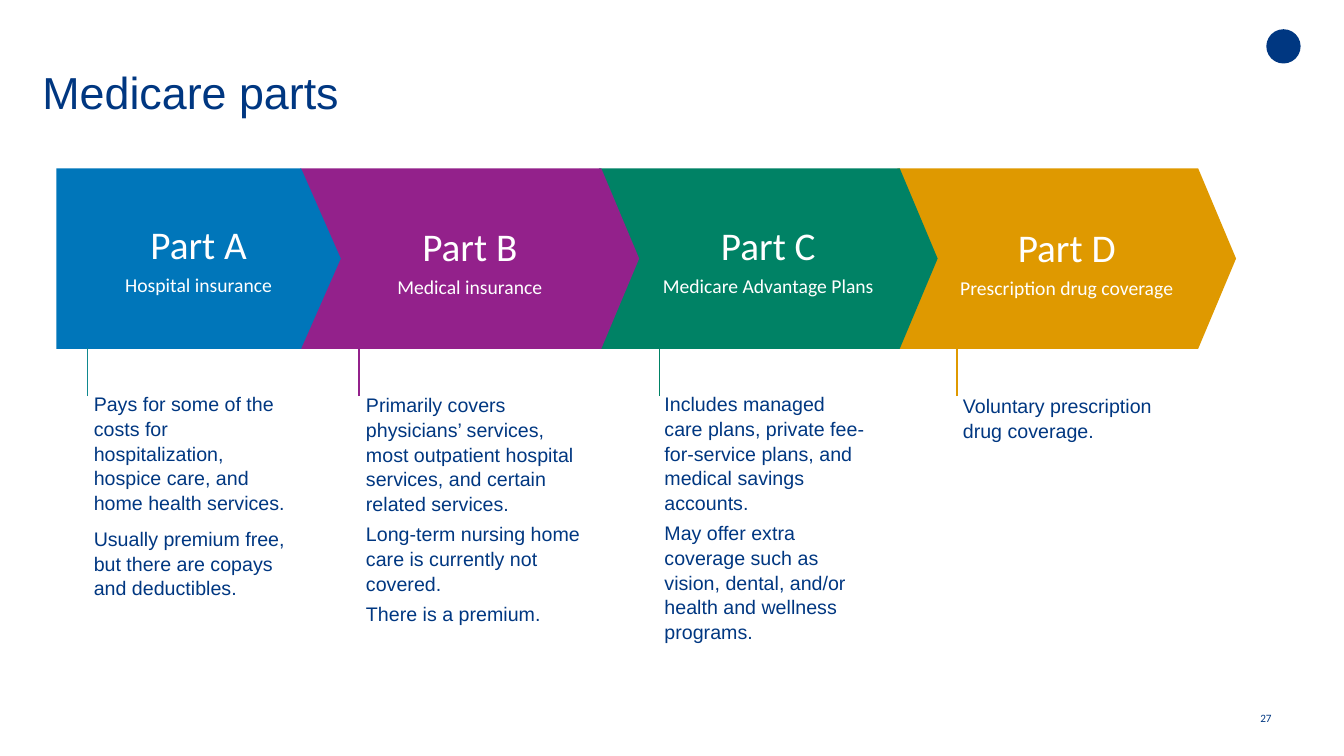
"""Build the Medicare parts slide: four arrow bands with notes below."""
from lxml.etree import SubElement
from pptx import Presentation
from pptx.dml.color import RGBColor
from pptx.enum.shapes import MSO_CONNECTOR, MSO_SHAPE
from pptx.enum.text import MSO_ANCHOR as ANCHOR, PP_ALIGN as ALIGN
from pptx.oxml.ns import qn
from pptx.util import Pt

NAVY, WHITE = "003781", "FFFFFF"
PARTS = [
    dict(name="Part A", subtitle="Hospital insurance", fill="0076BA", stem="0F898F",
         stem_x=87, label_y=167, note_box=(93, 388, 199), space_after=6,
         notes=["Pays for some of the costs for hospitalization, hospice care, "
                "and home health services.",
                "Usually premium free, but there are copays and deductibles."]),
    dict(name="Part B", subtitle="Medical insurance", fill="93218B", stem="93218B",
         stem_x=356, label_y=169, note_box=(363, 389, 222), space_after=2,
         notes=["Primarily covers physicians’ services, most outpatient hospital "
                "services, and certain related services.",
                "Long-term nursing home care is currently not covered.",
                "There is a premium."]),
    dict(name="Part C", subtitle="Medicare Advantage Plans", fill="008265", stem="008265",
         stem_x=654, label_y=168, note_box=(659, 388, 199), space_after=2,
         notes=["Includes managed care plans, private fee-for-service plans, "
                "and medical savings accounts.",
                "May offer extra coverage such as vision, dental, and/or health "
                "and wellness programs."]),
    dict(name="Part D", subtitle="Prescription drug coverage", fill="DF9900", stem="DF9900",
         stem_x=949, label_y=170, note_box=(955, 390, 199), space_after=2,
         notes=["Voluntary prescription drug coverage."]),
]
FIRST_X, BAND_Y, BAND_HEIGHT = 56, 167, 179
FIRST_WIDTH, CHEVRON_WIDTH = 282, 336
CHEVRON_X, CHEVRON_STEP, LABEL_INSET = 298, 296, 27
STEM_TOP, STEM_BOTTOM = 345, 393


def px(value):
    return value * 9144


def color(hex_string):
    return RGBColor.from_string(hex_string)


def add_block(slide, shape_type, box, fill, adjustment=None):
    shape = slide.shapes.add_shape(shape_type, *map(px, box))
    shape.shadow.inherit = False
    shape.fill.solid()
    shape.fill.fore_color.rgb = color(fill)
    shape.line.fill.background()
    if adjustment is not None:
        shape.adjustments[0] = adjustment


def add_text(slide, box, lines, sizes, font="Arial", ink=NAVY, align=ALIGN.LEFT,
             anchor=ANCHOR.TOP, before=0, after=0, spacing=1.0):
    frame = slide.shapes.add_textbox(*map(px, box)).text_frame
    frame.word_wrap = True
    frame.vertical_anchor = anchor
    frame.margin_left = frame.margin_right = frame.margin_top = frame.margin_bottom = 0
    for index, (line, size) in enumerate(zip(lines, sizes)):
        paragraph = frame.add_paragraph() if index else frame.paragraphs[0]
        paragraph.alignment = align
        paragraph.space_before, paragraph.space_after = Pt(before), Pt(after)
        paragraph.line_spacing = spacing
        run = paragraph.add_run()
        run.text = line
        run.font.name, run.font.size = font, Pt(size)
        run.font.color.rgb = color(ink)


def add_stem(slide, x, ink):
    stem = slide.shapes.add_connector(
        MSO_CONNECTOR.STRAIGHT, px(x), px(STEM_BOTTOM), px(x), px(STEM_TOP))
    stem.line.color.rgb = color(ink)
    stem.line.width = Pt(1)
    SubElement(stem._element.spPr, qn("a:effectLst"))


def main():
    presentation = Presentation()
    presentation.slide_width, presentation.slide_height = px(1333), px(750)
    slide = presentation.slides.add_slide(presentation.slide_layouts[6])

    add_block(slide, MSO_SHAPE.OVAL, (1256, 29, 34, 34), NAVY)
    add_text(slide, (42, 29, 1198, 89), ["Medicare parts"], [32],
             anchor=ANCHOR.BOTTOM, spacing=0.9)
    add_text(slide, (1250, 692, 40, 40), ["27"], [8], font="Calibri", anchor=ANCHOR.MIDDLE)

    for index, part in reversed(list(enumerate(PARTS))):
        if index:
            x = CHEVRON_X + (index - 1) * CHEVRON_STEP
            add_block(slide, MSO_SHAPE.CHEVRON, (x, BAND_Y, CHEVRON_WIDTH, BAND_HEIGHT),
                      part["fill"], 0.21)
        else:
            add_block(slide, MSO_SHAPE.PENTAGON, (FIRST_X, BAND_Y, FIRST_WIDTH, BAND_HEIGHT),
                      part["fill"], 0.22)

    for index, part in enumerate(PARTS):
        label_x = CHEVRON_X + (index - 1) * CHEVRON_STEP + LABEL_INSET if index else FIRST_X
        add_stem(slide, part["stem_x"], part["stem"])
        add_text(slide, (label_x, part["label_y"], FIRST_WIDTH, 178),
                 [part["name"], part["subtitle"]], [28, 14], font="Calibri", ink=WHITE,
                 align=ALIGN.CENTER, anchor=ANCHOR.MIDDLE, before=2, after=2)
        add_text(slide, (*part["note_box"], 118), part["notes"], [14] * len(part["notes"]),
                 before=2, after=part["space_after"], spacing=1.05)

    presentation.save("out.pptx")


if __name__ == "__main__":
    main()
